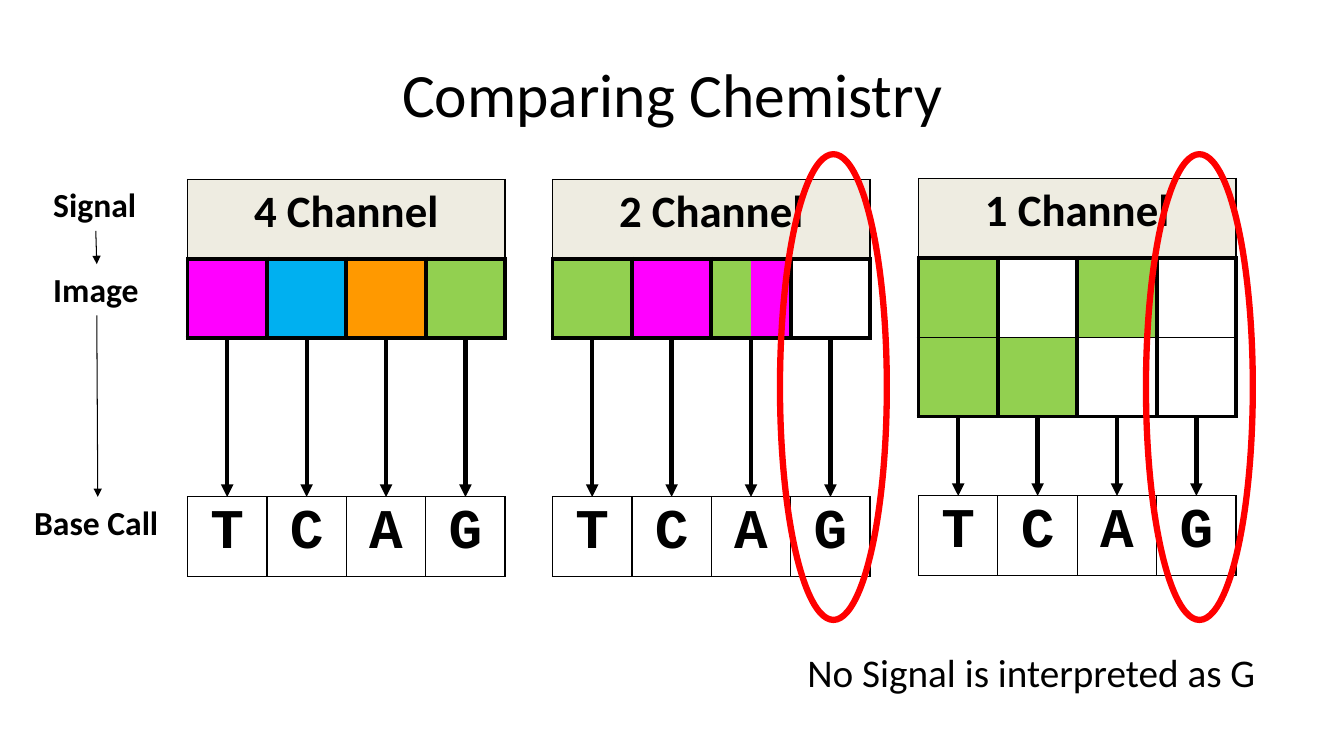
from lxml import etree
from pptx import Presentation
from pptx.dml.color import RGBColor
from pptx.enum.shapes import MSO_CONNECTOR, MSO_SHAPE
from pptx.enum.text import MSO_ANCHOR, PP_ALIGN
from pptx.oxml.ns import qn
from pptx.util import Inches, Pt

COLORS = {"black": "000000", "white": "FFFFFF", "header": "EEECE1", "magenta": "FF00FF",
          "blue": "00B0F0", "orange": "FF9900", "green": "92D050", "red": "FF0000"}

TITLE = "Comparing Chemistry"
NOTE = "No Signal is interpreted as G"

# Each base is (letter, number of colour strips); image rows list one colour per strip
PANELS = [
    {"heading": "4 Channel", "left": 1.86, "top": 1.78, "g_is_dark": False,
     "bases": [("T", 1), ("C", 1), ("A", 1), ("G", 1)],
     "image": [["magenta", "blue", "orange", "green"]]},
    {"heading": "2 Channel", "left": 5.48, "top": 1.78, "g_is_dark": True,
     "bases": [("T", 1), ("C", 1), ("A", 2), ("G", 1)],
     "image": [["green", "magenta", "green", "magenta", None]]},
    {"heading": "1 Channel", "left": 9.11, "top": 1.77, "g_is_dark": True,
     "bases": [("T", 1), ("C", 1), ("A", 1), ("G", 1)],
     "image": [["green", None, "green", None], ["green", "green", None, None]]},
]
# text, left, top, width
STAGES = [("Signal", 0.43, 1.78, 1.03), ("Image", 0.43, 2.62, 1.06),
          ("Base Call", 0.24, 4.93, 1.45)]
# start x, start y, end x, end y
STAGE_ARROWS = [(0.95, 2.29, 0.96, 2.62), (0.96, 3.13, 0.97, 4.93)]

CELL = 3.15 / 4
ROWS = 5
THIN, THICK = 1, 3

prs = Presentation()
prs.slide_width, prs.slide_height = Inches(13.33), Inches(7.5)
slide = prs.slides.add_slide(prs.slide_layouts[6])


def rgb(name):
    return RGBColor.from_string(COLORS[name])


def write(frame, text, size, bold=False, align=None, font="Calibri"):
    paragraph = frame.paragraphs[0]
    paragraph.alignment = align
    run = paragraph.add_run()
    run.text = text
    run.font.name, run.font.size, run.font.bold = font, Pt(size), bold
    run.font.color.rgb = rgb("black")


def add_label(text, left, top, width, height, size, bold=False):
    frame = slide.shapes.add_textbox(*map(Inches, (left, top, width, height))).text_frame
    frame.word_wrap = False
    write(frame, text, size, bold)


def add_arrow(x1, y1, x2, y2, weight):
    arrow = slide.shapes.add_connector(MSO_CONNECTOR.STRAIGHT, *map(Inches, (x1, y1, x2, y2)))
    arrow.line.color.rgb = rgb("black")
    arrow.line.width = Pt(weight)
    etree.SubElement(arrow.line._get_or_add_ln(), qn("a:tailEnd"), type="triangle")
    etree.SubElement(arrow._element.spPr, qn("a:effectLst"))


def style_cell(cell, fill, left=0, right=0, top=0, bottom=0):
    if fill:
        cell.fill.solid()
        cell.fill.fore_color.rgb = rgb(fill)
    else:
        cell.fill.background()
    sides = [("L", left), ("R", right), ("T", top), ("B", bottom)]
    for position, (side, weight) in enumerate(sides):
        border = etree.Element(qn(f"a:ln{side}"), w=str(Pt(weight)))
        if weight:
            solid = etree.SubElement(border, qn("a:solidFill"))
            etree.SubElement(solid, qn("a:srgbClr"), val=COLORS["black"])
        else:
            etree.SubElement(border, qn("a:noFill"))
        cell._tc.get_or_add_tcPr().insert(position, border)


def add_panel(panel):
    # One entry per strip: width, whether it opens its base, whether it closes it
    strips = [(CELL / count, part == 0, part == count - 1)
              for _, count in panel["bases"] for part in range(count)]
    image = panel["image"]
    last_image = len(image)
    table = slide.shapes.add_table(ROWS, len(strips), Inches(panel["left"]), Inches(panel["top"]),
                                   Inches(4 * CELL), Inches(ROWS * CELL)).table
    table.first_row = table.horz_banding = False
    for row in table.rows:
        row.height = Inches(CELL)
    for col, (width, opens, closes) in enumerate(strips):
        table.columns[col].width = Inches(width)
        style_cell(table.cell(0, col), "header", THIN, THIN, THIN, THICK)
        for r, colors in enumerate(image, 1):
            style_cell(table.cell(r, col), colors[col],
                       THICK if opens else 0, THICK if closes else 0,
                       THICK if r == 1 else THIN, THICK if r == last_image else THIN)
        for r in range(last_image + 1, ROWS - 1):
            style_cell(table.cell(r, col), None, top=THICK if r == last_image + 1 else 0,
                       bottom=THIN if r == ROWS - 2 else 0)
        style_cell(table.cell(ROWS - 1, col), "white", THIN, THIN, THIN, THIN)

    # Heading and base letters
    table.cell(0, 0).merge(table.cell(0, len(strips) - 1))
    write(table.cell(0, 0).text_frame, panel["heading"], 32, True, PP_ALIGN.CENTER)
    col = 0
    for letter, count in panel["bases"]:
        call = table.cell(ROWS - 1, col)
        if count > 1:
            call.merge(table.cell(ROWS - 1, col + count - 1))
        write(call.text_frame, letter, 40, True, PP_ALIGN.CENTER, "Courier New")
        col += count


# Panels
for panel in PANELS:
    add_panel(panel)

# Title and note
title = slide.shapes.add_textbox(Inches(0.67), Inches(0.3), Inches(12), Inches(1.25)).text_frame
title.word_wrap = True
title.vertical_anchor = MSO_ANCHOR.MIDDLE
write(title, TITLE, 44, align=PP_ALIGN.CENTER)
add_label(NOTE, 7.91, 6.38, 4.69, 0.57, 28)

# Arrows from image to base call
for panel in PANELS:
    image_bottom = panel["top"] + (1 + len(panel["image"])) * CELL
    for i in range(len(panel["bases"])):
        x = panel["left"] + (i + 0.5) * CELL
        add_arrow(x, image_bottom, x, panel["top"] + (ROWS - 1) * CELL, 3)

# Rings around the G columns without signal
for panel in PANELS:
    if panel["g_is_dark"]:
        ring = slide.shapes.add_shape(MSO_SHAPE.OVAL, Inches(panel["left"] + 3.5 * CELL - 0.5),
                                      Inches(1.53), Inches(1.06), Inches(4.62))
        ring.shadow.inherit = False
        ring.fill.background()
        ring.line.color.rgb = rgb("red")
        ring.line.width = Pt(4.5)

# Stages on the left
for text, left, top, width in STAGES:
    add_label(text, left, top, width, 0.5, 24, True)
for ends in STAGE_ARROWS:
    add_arrow(*ends, 0.75)

prs.save("out.pptx")
